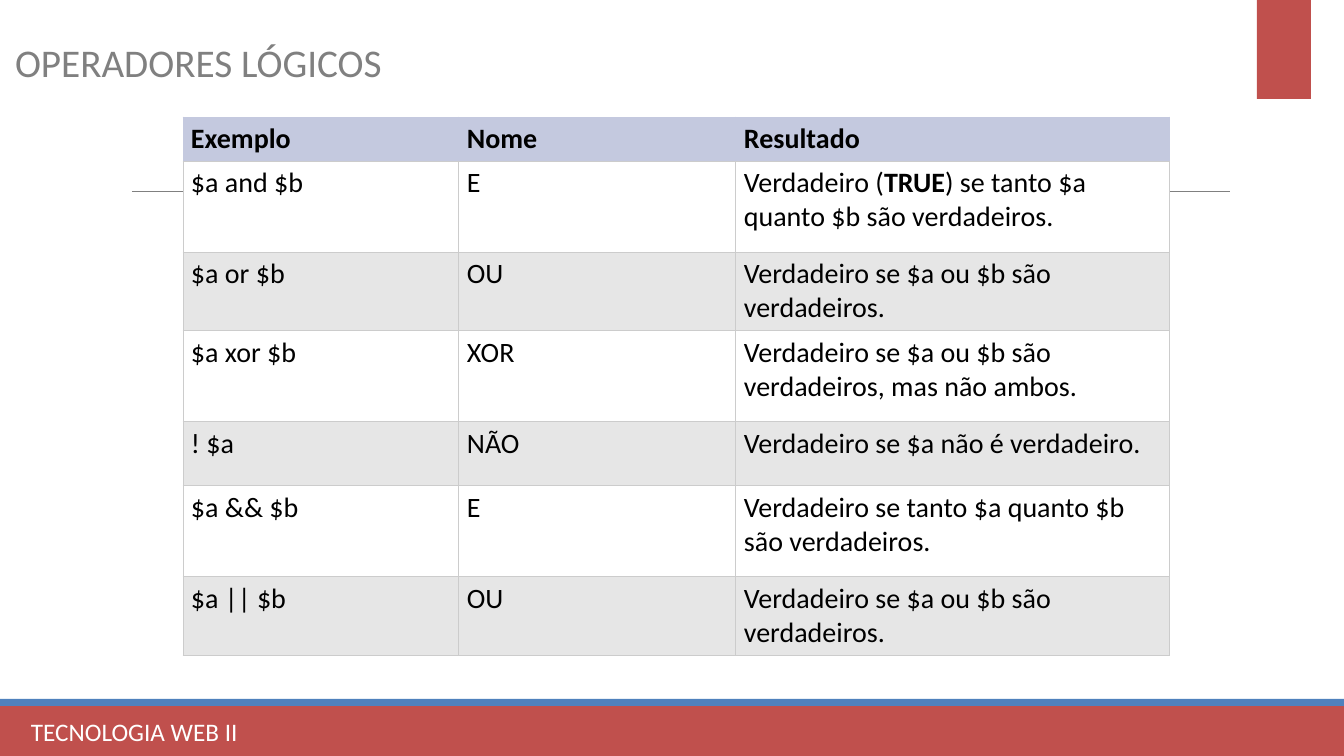
from lxml import etree
from pptx import Presentation
from pptx import util as u
from pptx.dml.color import RGBColor
from pptx.enum import shapes, text
from pptx.oxml.ns import qn

SCALE = 914400 / 100.8
WIDE, HIGH = 1344, 756
FONT = "Calibri"
RED = RGBColor(0xC0, 0x50, 0x4D)
BLUE = RGBColor(0x4F, 0x81, 0xBD)
GRAY = RGBColor(0x80, 0x80, 0x80)
WHITE = RGBColor(0xFF, 0xFF, 0xFF)
BLACK = RGBColor(0, 0, 0)
HEAD = RGBColor(0xC4, 0xC9, 0xDF)
BAND = RGBColor(0xE6, 0xE6, 0xE6)
EDGE = RGBColor(0xCC, 0xCC, 0xCC)

COLS = [276, 277, 434]
TALL = [44, 91, 79, 91, 64, 91, 79]
ROWS = [
    ("Exemplo", "Nome", "Resultado"),
    ("$a and $b", "E", "Verdadeiro (*TRUE*) se tanto $a quanto $b são verdadeiros."),
    ("$a or $b", "OU", "Verdadeiro se $a ou $b são verdadeiros."),
    ("$a xor $b", "XOR", "Verdadeiro se $a ou $b são verdadeiros, mas não ambos."),
    ("! $a", "NÃO", "Verdadeiro se $a não é verdadeiro."),
    ("$a && $b", "E", "Verdadeiro se tanto $a quanto $b são verdadeiros."),
    ("$a || $b", "OU", "Verdadeiro se $a ou $b são verdadeiros."),
]


def px(n):
    return u.Emu(round(n * SCALE))


def style(para, size, color):
    font = para.font
    font.name, font.size = FONT, u.Pt(size)
    font.color.rgb = color


def bar(slide, x, y, w, h, color):
    rect = slide.shapes.add_shape(
        shapes.MSO_SHAPE.RECTANGLE, px(x), px(y), px(w), px(h))
    rect.shadow.inherit = False
    rect.fill.solid()
    rect.fill.fore_color.rgb = color
    rect.line.fill.background()


def rule(slide, x, y, w):
    line = slide.shapes.add_connector(
        shapes.MSO_CONNECTOR.STRAIGHT, px(x), px(y), px(x + w), px(y))
    line.line.color.rgb = GRAY
    line.line.width = u.Pt(0.5)
    etree.SubElement(line.element.spPr, qn("a:effectLst"))


def footer(slide, x, y, w, h):
    strip = 7
    bar(slide, x, y + strip, w, h - strip, RED)
    bar(slide, x, y, w, strip, BLUE)
    box = slide.shapes.add_textbox(px(x + 21), px(y + 12), px(717), px(40))
    frame = box.text_frame
    frame.word_wrap = True
    para = frame.paragraphs[0]
    para.text = "TECNOLOGIA WEB II"
    style(para, 18, WHITE)


def title(slide, x, y, w, h):
    head = slide.shapes.title
    head.left, head.top, head.width, head.height = map(px, (x, y, w, h))
    frame = head.text_frame
    frame.text = "OPERADORES LÓGICOS"
    frame.word_wrap = False
    frame.auto_size = text.MSO_AUTO_SIZE.NONE
    frame.vertical_anchor = text.MSO_ANCHOR.MIDDLE
    para = frame.paragraphs[0]
    para.alignment = text.PP_ALIGN.LEFT
    style(para, 28, GRAY)


def border(cell, first):
    props = cell._tc.get_or_add_tcPr()
    for spot, side in enumerate(("lnL", "lnR", "lnT", "lnB")):
        line = etree.Element(qn("a:" + side), w=str(u.Pt(0.75)))
        fill = etree.SubElement(line, qn("a:solidFill"))
        color = HEAD if first and side != "lnB" else EDGE
        etree.SubElement(fill, qn("a:srgbClr"), val=str(color))
        props.insert(spot, line)


def fill_cell(cell, words, row):
    cell.margin_left = cell.margin_right = px(8)
    cell.margin_top = cell.margin_bottom = px(5)
    cell.fill.solid()
    cell.fill.fore_color.rgb = HEAD if row == 0 else WHITE if row % 2 else BAND
    border(cell, row == 0)
    para = cell.text_frame.paragraphs[0]
    for spot, part in enumerate(words.split("*")):
        run = para.add_run()
        run.text = part
        run.font.bold = row == 0 or spot % 2 == 1
    style(para, 20, BLACK)


def table(slide, x, y):
    grid = slide.shapes.add_table(
        len(ROWS), len(COLS), px(x), px(y), px(sum(COLS)), px(sum(TALL))).table
    for col, w in zip(grid.columns, COLS):
        col.width = px(w)
    for r, (line, h) in enumerate(zip(ROWS, TALL)):
        grid.rows[r].height = px(h)
        for c, words in enumerate(line):
            fill_cell(grid.cell(r, c), words, r)


def main():
    deck = Presentation()
    deck.slide_width, deck.slide_height = px(WIDE), px(HIGH)
    slide = deck.slides.add_slide(deck.slide_layouts[5])
    rule(slide, 132, 191, 1098)
    footer(slide, 0, 699, WIDE, HIGH - 699)
    bar(slide, 1257, 0, 54, 99, RED)
    title(slide, 5, 33, 477, 58)
    table(slide, 183, 117)
    deck.save("out.pptx")


if __name__ == "__main__":
    main()
